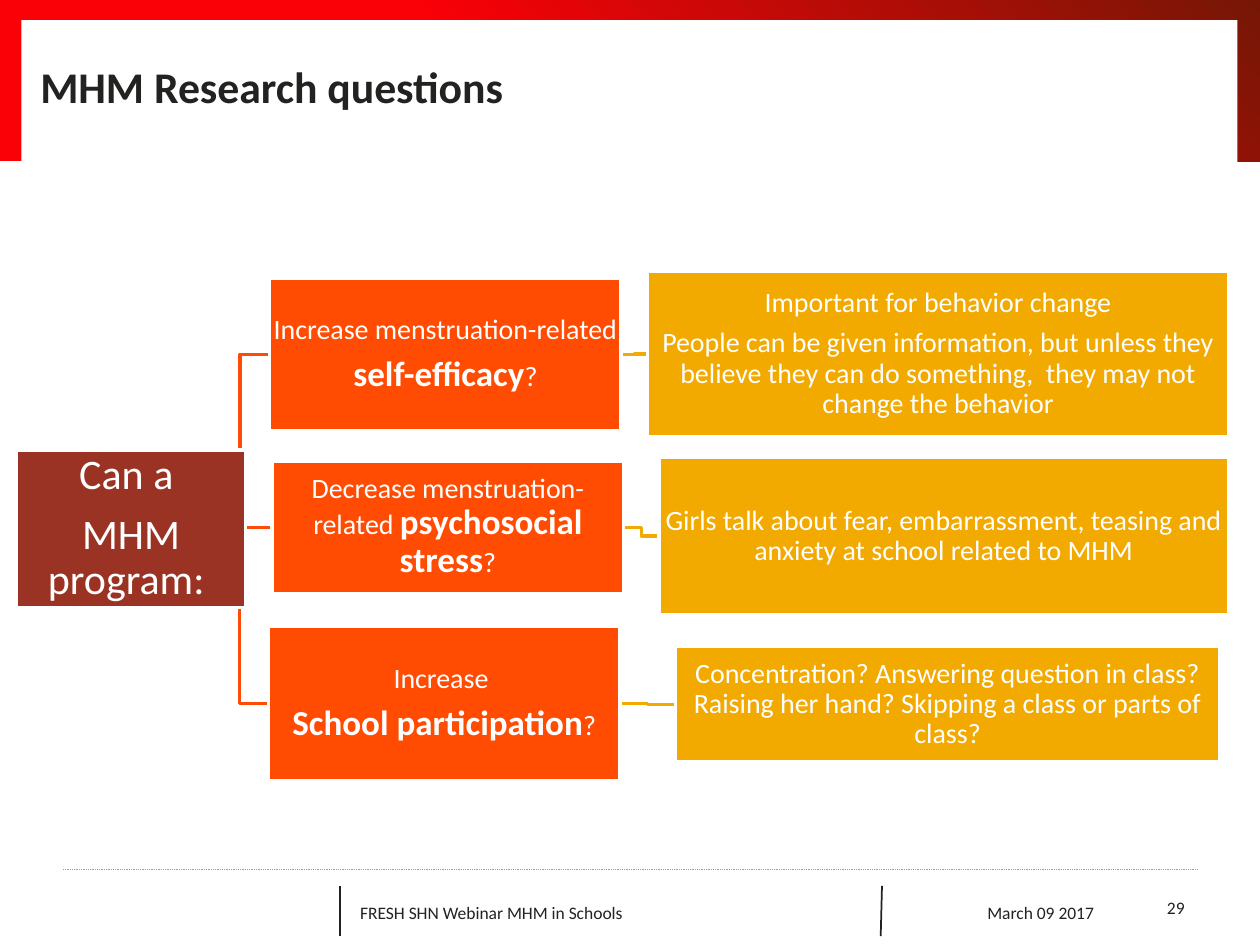
from lxml import etree
from pptx import Presentation
from pptx.dml.color import RGBColor
from pptx.enum.dml import MSO_LINE
from pptx.enum.shapes import MSO_CONNECTOR as CONN, MSO_SHAPE
from pptx.enum.text import MSO_ANCHOR, PP_ALIGN as AL
from pptx.oxml.ns import qn
from pptx.util import Inches, Pt

WHITE = RGBColor(0xFF, 0xFF, 0xFF)
INK = RGBColor(0x22, 0x22, 0x21)
RED = RGBColor(0xFA, 0x00, 0x07)
DARK_RED = RGBColor(0x76, 0x17, 0x06)
BRICK = RGBColor(0x9A, 0x33, 0x24)
ORANGE = RGBColor(0xFF, 0x4C, 0x02)
AMBER = RGBColor(0xF2, 0xA9, 0x00)
SAND = RGBColor(0xA8, 0x9F, 0x82)
FONT = "Calibri"

# A paragraph is a list of runs; a run is (text, size, bold).
TITLE = [[("MHM Research questions", 25, True)]]
ROOT = ((0.13, 3.57, 1.82, 1.25),
        [[("Can a ", 24, False)], [("MHM program: ", 24, False)]])
BRANCHES = [  # question box and text, then reason box and text
    ((2.14, 2.21, 2.79, 1.21),
     [[("Increase menstruation-related ", 16, False)],
      [("self-efficacy", 20, True), ("?", 16, False)]],
     (5.14, 2.15, 4.61, 1.32),
     [[("Important for behavior change", 16, False)],
      [("People can be given information, but unless they believe they can "
        "do something,  they may not change the behavior", 16, False)]]),
    ((2.16, 3.66, 2.79, 1.05),
     [[("Decrease menstruation-related ", 16, False),
       ("psychosocial stress", 20, True), ("?", 16, False)]],
     (5.23, 3.63, 4.52, 1.25),
     [[("Girls talk about fear, embarrassment, teasing and anxiety at school "
        "related to MHM", 16, False)]]),
    ((2.13, 4.97, 2.79, 1.23),
     [[("Increase ", 16, False)],
      [("School participation", 20, True), ("?", 16, False)]],
     (5.36, 5.13, 4.32, 0.92),
     [[("Concentration? Answering question in class? Raising her hand? "
        "Skipping a class or parts of class?", 16, False)]]),
]
FOOTERS = [
    ((7.05, 7.04, 1.73, 0.4), "March 09 2017", AL.RIGHT),
    ((2.76, 7.04, 4.18, 0.4), "FRESH SHN Webinar MHM in Schools", AL.LEFT),
    ((7.17, 7.1, 2.33, 0.2), "29", AL.RIGHT),
]
DIVIDERS = [((2.7, 7.03), (2.7, 7.43)), ((7, 7.03), (6.99, 7.43))]
TRUNK_X = 1.67  # where the branch lines start, behind the root box


def write(s, paragraphs, color, align, inset):
    tf = s.text_frame
    tf.word_wrap = True
    tf.vertical_anchor = MSO_ANCHOR.MIDDLE
    tf.margin_left = tf.margin_right = Inches(inset[0])
    tf.margin_top = tf.margin_bottom = Inches(inset[1])
    for i, runs in enumerate(paragraphs):
        p = tf.add_paragraph() if i else tf.paragraphs[0]
        p.alignment = align
        for text, size, bold in runs:
            r = p.add_run()
            r.text = text
            r.font.name, r.font.size, r.font.bold = FONT, Pt(size), bold
            r.font.color.rgb = color


def add_rect(shapes, box):
    s = shapes.add_shape(MSO_SHAPE.RECTANGLE, *map(Inches, box))
    s.shadow.inherit = False
    s.line.fill.background()
    return s


def add_node(shapes, box, paragraphs, fill, inset=0.01):
    s = add_rect(shapes, box)
    s.fill.solid()
    s.fill.fore_color.rgb = fill
    s.line.color.rgb = WHITE
    s.line.width = Pt(2)
    write(s, paragraphs, WHITE, AL.CENTER, (inset, inset))
    for p in s.text_frame.paragraphs:
        p.line_spacing = 0.9
        p.space_after = Pt(0.35 * p.runs[0].font.size.pt)


def add_label(shapes, box, paragraphs, align, inset=(0.1, 0.05)):
    s = shapes.add_textbox(*map(Inches, box))
    write(s, paragraphs, INK, align, inset)


def add_line(shapes, start, end, color, width, kind=CONN.STRAIGHT):
    c = shapes.add_connector(kind, *map(Inches, (*start, *end)))
    c.line.color.rgb = color
    c.line.width = Pt(width)
    etree.SubElement(c._element.spPr, qn("a:effectLst"))
    return c


def left_mid(box):
    return box[0], box[1] + box[3] / 2


def right_mid(box):
    return box[0] + box[2], box[1] + box[3] / 2


def add_frame(shapes):
    band = add_rect(shapes, (0, 0, 10, 1.28))
    band.fill.gradient()
    band.fill.gradient_angle = 45
    for stop, color, position in zip(band.fill.gradient_stops,
                                     (RED, DARK_RED), (0.4, 1)):
        stop.color.rgb = color
        stop.position = position
    panel = add_rect(shapes, (0.17, 0.16, 9.65, 1.18))
    panel.fill.solid()
    panel.fill.fore_color.rgb = WHITE
    for start, end in DIVIDERS:
        add_line(shapes, start, end, INK, 1)
    rule = add_line(shapes, (0.5, 6.9), (9.5, 6.9), SAND, 0.5)
    rule.line.dash_style = MSO_LINE.ROUND_DOT


def add_tree(shapes):
    root_box, root_text = ROOT
    trunk = (TRUNK_X, left_mid(root_box)[1])
    for question, _, reason, _ in BRANCHES:
        add_line(shapes, trunk, left_mid(question), ORANGE, 2, CONN.ELBOW)
        add_line(shapes, right_mid(question), left_mid(reason), AMBER, 2,
                 CONN.ELBOW)
    add_node(shapes, root_box, root_text, BRICK, 0.02)
    for question, question_text, reason, reason_text in BRANCHES:
        add_node(shapes, question, question_text, ORANGE)
        add_node(shapes, reason, reason_text, AMBER)


def main():
    prs = Presentation()
    prs.slide_width, prs.slide_height = Inches(10), Inches(7.5)
    shapes = prs.slides.add_slide(prs.slide_layouts[6]).shapes
    add_frame(shapes)
    add_label(shapes, (0.32, 0.33, 9, 0.7), TITLE, AL.LEFT, (0, 0))
    add_tree(shapes)
    for box, text, align in FOOTERS:
        add_label(shapes, box, [[(text, 10, False)]], align)
    prs.save("out.pptx")


if __name__ == "__main__":
    main()
